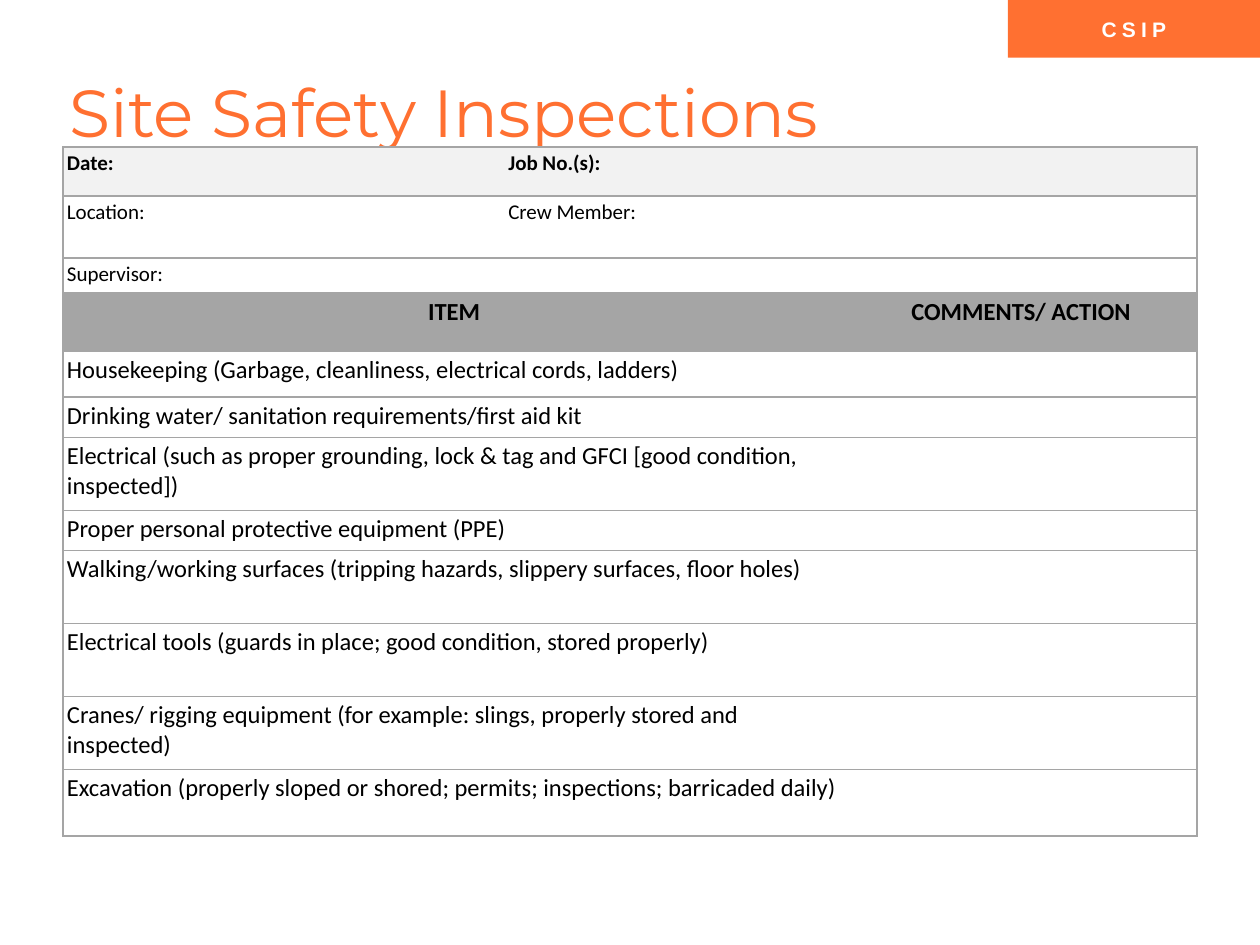
from lxml.etree import SubElement
from pptx import Presentation
from pptx.dml.color import RGBColor
from pptx.enum.shapes import MSO_SHAPE
from pptx.enum.text import MSO_ANCHOR, PP_ALIGN
from pptx.oxml.ns import qn
from pptx.util import Pt

COLORS = {"orange": "FF7031", "white": "FFFFFF", "black": "000000",
          "gray": "A5A5A5", "pale": "F2F2F2"}
TABLE_LEFT, DETAILS_TOP = 36, 84
INSET = 2.25

DETAILS = {
    "rows": [("Date:", "Job No.(s):"),
             ("Location:", "Crew Member:"),
             ("Supervisor:", "")],
    "widths": [238.5, 409.5], "heights": [28, 35.5, 20],
    "size": 12, "header": "pale", "align": PP_ALIGN.LEFT, "indent": 13.75,
}
CHECKLIST = {
    "rows": [("ITEM", "COMMENTS/ ACTION")] + [(item, "") for item in (
        "Housekeeping (Garbage, cleanliness, electrical cords, ladders)",
        "Drinking water/ sanitation requirements/first aid kit",
        "Electrical (such as proper grounding, lock & tag and GFCI [good condition, inspected])",
        "Proper personal protective equipment (PPE)",
        "Walking/working surfaces (tripping hazards, slippery surfaces, floor holes)",
        "Electrical tools (guards in place; good condition, stored properly)",
        "Cranes/ rigging equipment (for example: slings, properly stored and inspected)",
        "Excavation (properly sloped or shored; permits; inspections; barricaded daily)",
    )],
    "widths": [447, 201],
    "heights": [33, 26.5, 23, 41.75, 23, 41.75, 41.75, 41.75, 38],
    "size": 14, "header": "gray", "align": PP_ALIGN.CENTER, "indent": 0,
}


def color(name):
    return RGBColor.from_string(COLORS[name])


def add_span(para, text, font, size, ink, bold=False):
    span = para.add_run()
    span.text = text
    span.font.name, span.font.size, span.font.bold = font, Pt(size), bold
    span.font.color.rgb = color(ink)
    return span


def set_up_text(shape):
    frame = shape.text_frame
    frame.word_wrap = True
    frame.vertical_anchor = MSO_ANCHOR.MIDDLE
    frame.margin_left = frame.margin_right = Pt(3.6)
    frame.margin_top = frame.margin_bottom = Pt(3.6)
    return frame.paragraphs[0]


def set_borders(cell, first, last):
    """Rule every row, and close the table only at its outer sides."""
    properties = cell._tc.get_or_add_tcPr()
    drawn = {"L": first, "R": last, "T": True, "B": True}
    for side, visible in drawn.items():
        line = SubElement(properties, qn(f"a:ln{side}"), w=str(Pt(1)))
        if visible:
            fill = SubElement(line, qn("a:solidFill"))
            SubElement(fill, qn("a:srgbClr"), val=COLORS["gray"])
        else:
            SubElement(line, qn("a:noFill"))


def add_form_table(page, top, form):
    rows, widths, heights = form["rows"], form["widths"], form["heights"]
    table = page.shapes.add_table(
        len(rows), len(widths), Pt(TABLE_LEFT), Pt(top),
        Pt(sum(widths)), Pt(sum(heights))).table
    for column, width in zip(table.columns, widths):
        column.width = Pt(width)
    for r, (texts, height) in enumerate(zip(rows, heights)):
        table.rows[r].height = Pt(height)
        for c, text in enumerate(texts):
            cell = table.cell(r, c)
            cell.margin_left = Pt(INSET + c * form["indent"])
            cell.margin_right = cell.margin_top = cell.margin_bottom = Pt(INSET)
            set_borders(cell, c == 0, c == len(widths) - 1)
            cell.fill.solid()
            cell.fill.fore_color.rgb = color("white" if r else form["header"])
            para = cell.text_frame.paragraphs[0]
            para.alignment = PP_ALIGN.LEFT if r else form["align"]
            if text:
                add_span(para, text, "Calibri", form["size"], "black", r == 0)
            else:
                SubElement(para._p, qn("a:endParaRPr"), sz=str(form["size"] * 100))


deck = Presentation()
deck.slide_width, deck.slide_height = Pt(720), Pt(540)
page = deck.slides.add_slide(deck.slide_layouts[6])

tag = page.shapes.add_shape(MSO_SHAPE.RECTANGLE, Pt(576), Pt(0), Pt(144), Pt(33))
tag.shadow.inherit = False
tag.fill.solid()
tag.fill.fore_color.rgb = color("orange")
tag.line.fill.background()
para = set_up_text(tag)
para.alignment = PP_ALIGN.CENTER
span = add_span(para, "CSIP", "Arial", 12, "white", True)
span.font._element.set("spc", "300")

title = page.shapes.add_textbox(Pt(36), Pt(7), Pt(648), Pt(119))
para = set_up_text(title)
para.line_spacing = 0.9
add_span(para, "Site Safety Inspections", "Montserrat", 38, "orange")

add_form_table(page, DETAILS_TOP, DETAILS)
add_form_table(page, DETAILS_TOP + sum(DETAILS["heights"]), CHECKLIST)

deck.save("out.pptx")
